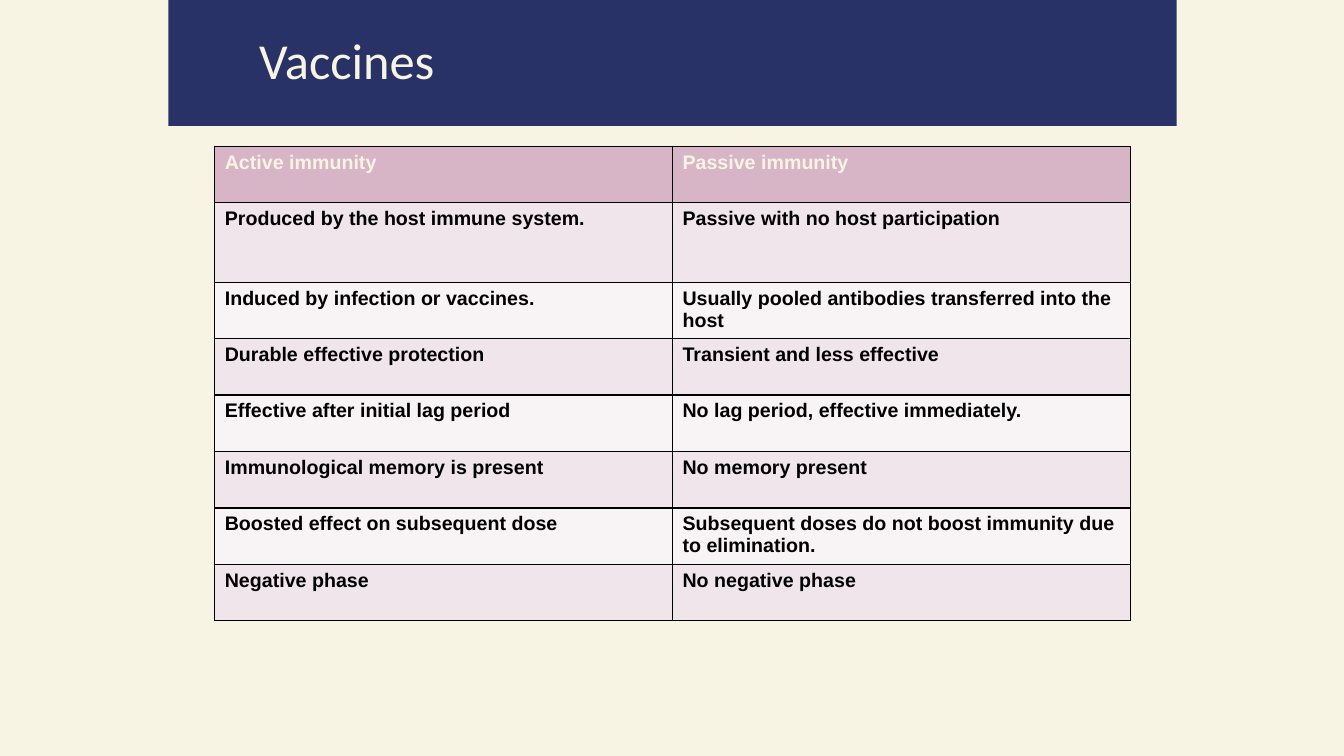
from dataclasses import dataclass

import pptx
import pptx.dml.color
import pptx.enum.shapes
import pptx.enum.text
import pptx.util
from lxml import etree
from pptx.util import Inches

DRAWING_NS = "http://schemas.openxmlformats.org/drawingml/2006/main"


@dataclass(frozen=True)
class Theme:
    cream: str = "F8F4E4"
    navy: str = "293267"
    black: str = "000000"
    header_fill: str = "D7B5C6"
    row_fills: tuple = ("F0E5EA", "F8F3F5")
    title_font: str = "Calibri"
    table_font: str = "Arial"
    title_size: int = 36
    table_size: int = 14
    border_width: int = 1


def rgb(value):
    return pptx.dml.color.RGBColor.from_string(value)


def write_text(frame, text, *, font, size, color, bold=False):
    paragraph = frame.paragraphs[0]
    paragraph.alignment = pptx.enum.text.PP_ALIGN.LEFT
    run = paragraph.add_run()
    run.text = text
    run.font.name = font
    run.font.size = pptx.util.Pt(size)
    run.font.bold = bold
    run.font.color.rgb = rgb(color)


class SlideBuilder:
    def __init__(self, slide, theme):
        self.slide = slide
        self.theme = theme

    def background(self):
        fill = self.slide.background.fill
        fill.solid()
        fill.fore_color.rgb = rgb(self.theme.cream)

    def title(self, text, left, top, width, height):
        title = self.slide.shapes.title
        title.left, title.top = Inches(left), Inches(top)
        title.width, title.height = Inches(width), Inches(height)
        frame = title.text_frame
        frame.word_wrap = True
        frame.auto_size = pptx.enum.text.MSO_AUTO_SIZE.NONE
        frame.vertical_anchor = pptx.enum.text.MSO_ANCHOR.MIDDLE
        write_text(frame, text, font=self.theme.title_font,
                   size=self.theme.title_size, color=self.theme.cream)

    def title_band(self, left, top, width, height):
        band = self.slide.shapes.add_shape(
            pptx.enum.shapes.MSO_SHAPE.RECTANGLE,
            Inches(left), Inches(top), Inches(width), Inches(height))
        band.shadow.inherit = False
        band.fill.solid()
        band.fill.fore_color.rgb = rgb(self.theme.navy)
        band.line.fill.background()
        # Keep the band behind the title
        self.slide.shapes.title.element.addprevious(band.element)

    def cell_borders(self, cell):
        properties = cell._tc.get_or_add_tcPr()
        for side in ("lnL", "lnR", "lnT", "lnB"):
            line = etree.SubElement(properties, f"{{{DRAWING_NS}}}{side}",
                                    w=str(pptx.util.Pt(self.theme.border_width)))
            fill = etree.SubElement(line, f"{{{DRAWING_NS}}}solidFill")
            etree.SubElement(fill, f"{{{DRAWING_NS}}}srgbClr", val=self.theme.black)

    def table(self, rows, left, top, column_width, row_heights):
        theme = self.theme
        columns = len(rows[0])
        table = self.slide.shapes.add_table(
            len(rows), columns, Inches(left), Inches(top),
            Inches(column_width * columns), Inches(sum(row_heights))).table
        for column in table.columns:
            column.width = Inches(column_width)
        for index, (row, height) in enumerate(zip(rows, row_heights)):
            table.rows[index].height = Inches(height)
            is_header = index == 0
            fill = theme.header_fill if is_header else theme.row_fills[(index - 1) % 2]
            for column, text in enumerate(row):
                cell = table.cell(index, column)
                self.cell_borders(cell)
                cell.fill.solid()
                cell.fill.fore_color.rgb = rgb(fill)
                write_text(cell.text_frame, text, font=theme.table_font,
                           size=theme.table_size, bold=True,
                           color=theme.cream if is_header else theme.black)


IMMUNITY_COMPARISON = [
    ("Active immunity", "Passive immunity"),
    ("Produced by the host immune system.", "Passive with no host participation"),
    ("Induced by infection or vaccines.",
     "Usually pooled antibodies transferred into the host"),
    ("Durable effective protection", "Transient and less effective"),
    ("Effective after initial lag period", "No lag period, effective immediately."),
    ("Immunological memory is present", "No memory present"),
    ("Boosted effect on subsequent dose",
     "Subsequent doses do not boost immunity due to elimination."),
    ("Negative phase", "No negative phase"),
]


def main():
    presentation = pptx.Presentation()
    presentation.slide_width = Inches(13.33)
    presentation.slide_height = Inches(7.5)
    title_only = presentation.slide_layouts[5]
    builder = SlideBuilder(presentation.slides.add_slide(title_only), Theme())

    # Background and heading
    builder.background()
    builder.title("Vaccines", 2.47, 0.23, 5.11, 0.71)
    builder.title_band(1.67, 0, 10, 1.25)

    # Comparison table, with a taller first body row
    row_heights = [0.56, 0.79] + [0.56] * (len(IMMUNITY_COMPARISON) - 2)
    builder.table(IMMUNITY_COMPARISON, 2.13, 1.45, 4.54, row_heights)

    presentation.save("out.pptx")


if __name__ == "__main__":
    main()
